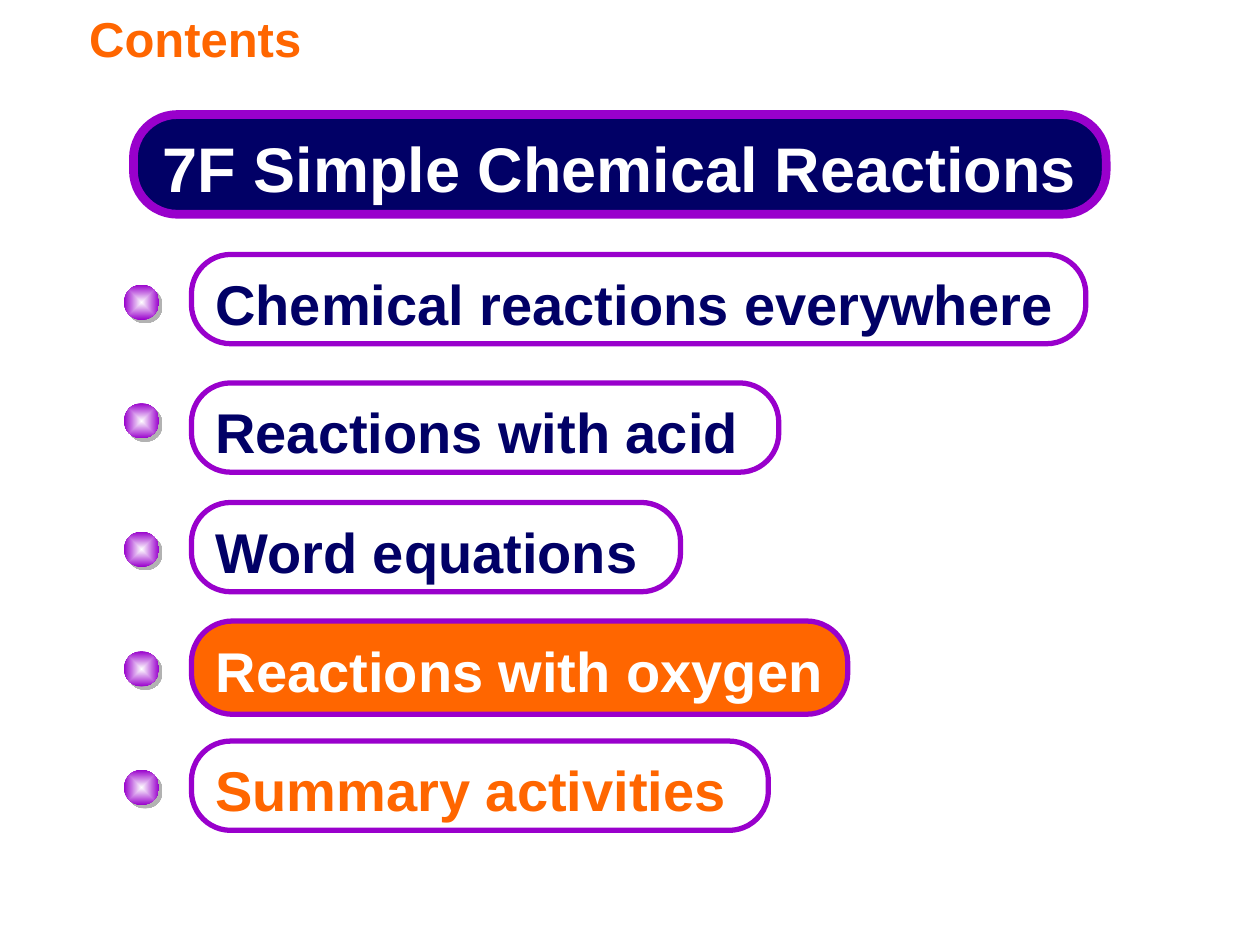
from dataclasses import dataclass

from lxml import etree
from pptx import Presentation
from pptx.dml.color import RGBColor
from pptx.enum import shapes, text
from pptx.oxml import ns, parse_xml
from pptx.util import Cm, Pt


@dataclass(frozen=True)
class Theme:
    navy: RGBColor = RGBColor(0x01, 0x00, 0x66)
    purple: RGBColor = RGBColor(0x99, 0x00, 0xCC)
    orange: RGBColor = RGBColor(0xFF, 0x66, 0x00)
    white: RGBColor = RGBColor(0xFF, 0xFF, 0xFF)
    shadow: RGBColor = RGBColor(0xB2, 0xB2, 0xB2)
    font: str = "Arial"
    heading_size: int = 28
    banner_size: int = 36
    topic_size: int = 32


THEME = Theme()

# Topic, top, width, height, bullet offset from the top (cm), fill, text colour
TOPICS = [
    ("Chemical reactions everywhere", 5.13, 18.03, 1.8, 0.61, None, THEME.navy),
    ("Reactions with acid", 7.72, 11.84, 1.8, 0.41, None, THEME.navy),
    ("Word equations", 10.13, 9.86, 1.8, 0.59, None, THEME.navy),
    ("Reactions with oxygen", 12.52, 13.23, 1.88, 0.61, THEME.orange, THEME.white),
    ("Summary activities", 14.94, 11.63, 1.8, 0.58, None, THEME.orange),
]


def write(para, words, size, color):
    span = para.add_run()
    span.text = words
    span.font.name = THEME.font
    span.font.size = Pt(size)
    span.font.bold = True
    span.font.color.rgb = color


def add_heading(page, left, top, width, height):
    box = page.shapes.add_textbox(Cm(left), Cm(top), Cm(width), Cm(height))
    frame = box.text_frame
    frame.word_wrap = True
    frame.vertical_anchor = text.MSO_ANCHOR.MIDDLE
    frame.margin_left = Cm(1.8)
    write(frame.paragraphs[0], "Contents", THEME.heading_size, THEME.orange)


def add_pill(page, left, top, width, height, words, size, color, fill, line,
             align=text.PP_ALIGN.LEFT):
    """Add a rounded, outlined label with one line of text."""
    pill = page.shapes.add_shape(shapes.MSO_SHAPE.ROUNDED_RECTANGLE,
                                 Cm(left), Cm(top), Cm(width), Cm(height))
    pill.shadow.inherit = False
    pill.adjustments[0] = 0.44
    if fill is None:
        pill.fill.background()
    else:
        pill.fill.solid()
        pill.fill.fore_color.rgb = fill
    pill.line.color.rgb = THEME.purple
    pill.line.width = Pt(line)

    frame = pill.text_frame
    frame.word_wrap = False
    frame.vertical_anchor = text.MSO_ANCHOR.TOP
    frame.margin_top = Cm(0.22)
    para = frame.paragraphs[0]
    para.alignment = align
    para.line_spacing = 0.9
    write(para, words, size, color)


def add_bullet(page, left, top, size=0.71):
    """Add a ball shaded from its centre, with a hard shadow."""
    ball = page.shapes.add_shape(shapes.MSO_SHAPE.OVAL,
                                 Cm(left), Cm(top), Cm(size), Cm(size))
    ball.shadow.inherit = False
    ball.line.fill.background()
    ball.fill.gradient()
    for stop, color in zip(ball.fill.gradient_stops, (THEME.white, THEME.purple)):
        stop.color.rgb = color

    props = ball.element.spPr
    gradient = props.find(ns.qn("a:gradFill"))
    gradient.replace(gradient.find(ns.qn("a:lin")), parse_xml(
        f'<a:path {ns.nsdecls("a")} path="shape">'
        '<a:fillToRect l="50000" t="50000" r="50000" b="50000"/></a:path>'))
    shadow = etree.SubElement(props.find(ns.qn("a:effectLst")), ns.qn("a:outerShdw"),
                              dist=str(Pt(2.8)), dir="2700000", algn="ctr",
                              rotWithShape="0")
    etree.SubElement(shadow, ns.qn("a:srgbClr"), val=str(THEME.shadow))


def add_topics(page, left):
    for words, top, width, height, drop, fill, color in TOPICS:
        add_bullet(page, left, top + drop)
        add_pill(page, left + 1.36, top, width, height, words,
                 THEME.topic_size, color, fill, line=3)


def main():
    deck = Presentation()
    deck.slide_width, deck.slide_height = Cm(25.4), Cm(19.05)
    page = deck.slides.add_slide(deck.slide_layouts[6])
    add_heading(page, 0, 0, 18.11, 1.52)
    add_pill(page, 2.69, 2.31, 19.61, 2.01, "7F Simple Chemical Reactions",
             THEME.banner_size, THEME.white, THEME.navy, line=5,
             align=text.PP_ALIGN.CENTER)
    add_topics(page, 2.5)
    deck.save("out.pptx")


if __name__ == "__main__":
    main()
